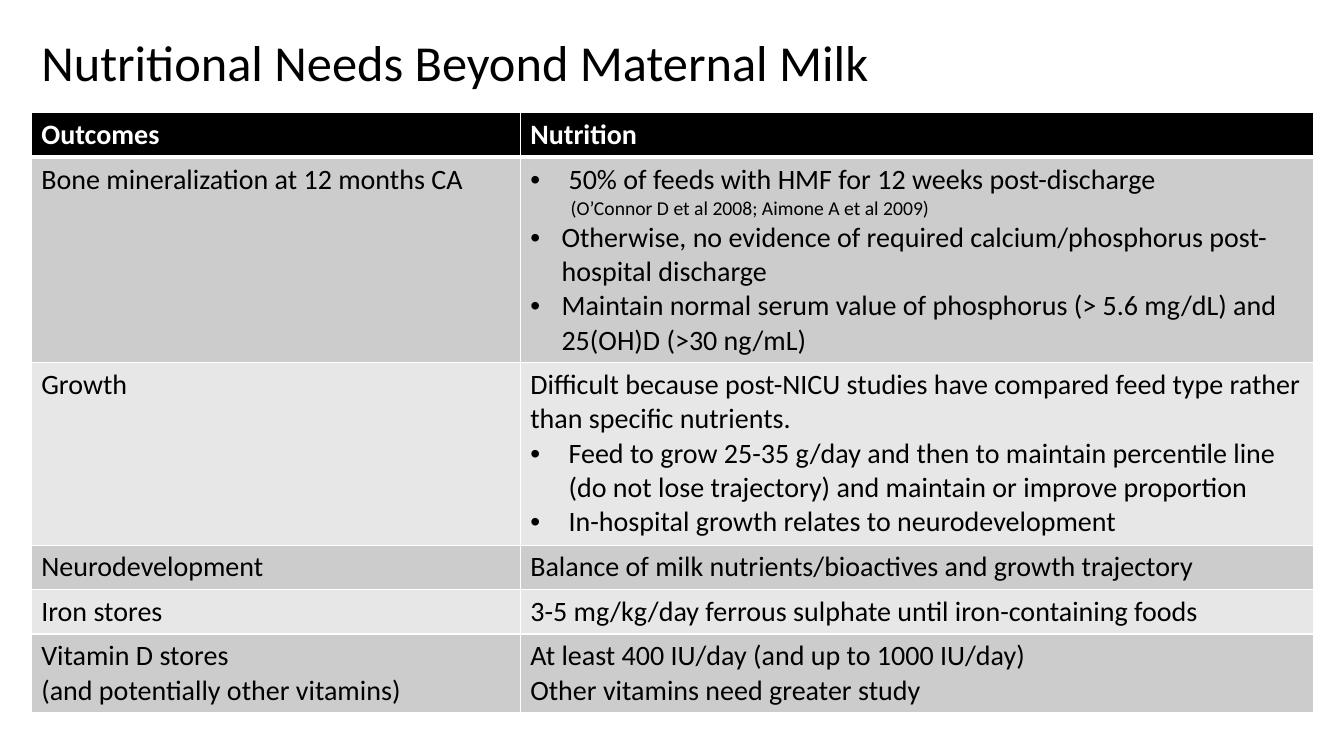
import pptx
import pptx.dml.color
import pptx.enum.text
import pptx.oxml
import pptx.oxml.ns
import pptx.util

Inches = pptx.util.Inches
Pt = pptx.util.Pt
RGBColor = pptx.dml.color.RGBColor

BLACK = RGBColor(0x00, 0x00, 0x00)
WHITE = RGBColor(0xFF, 0xFF, 0xFF)
DARK_BAND = RGBColor(0xCC, 0xCC, 0xCC)
LIGHT_BAND = RGBColor(0xE7, 0xE7, 0xE7)
FONT = "Calibri"

COL_WIDTHS = [4.85, 7.87]
ROW_HEIGHTS = [0.44, 2.03, 1.81, 0.44, 0.44, 0.78]

# Each paragraph: text, left indent in inches, bulleted, size in points
ROWS = [
    ([("Outcomes", 0, False, 20)],
     [("Nutrition", 0, False, 20)]),
    ([("Bone mineralization at 12 months CA", 0, False, 20)],
     [("50% of feeds with HMF for 12 weeks post-discharge", 0.38, True, 20),
      ("(O’Connor D et al 2008; Aimone A et al 2009)", 0.4, False, 14),
      ("Otherwise, no evidence of required calcium/phosphorus post-hospital discharge", 0.31, True, 20),
      ("Maintain normal serum value of phosphorus (> 5.6 mg/dL) and 25(OH)D (>30 ng/mL)", 0.31, True, 20)]),
    ([("Growth", 0, False, 20)],
     [("Difficult because post-NICU studies have compared feed type rather than specific nutrients.", 0, False, 20),
      ("Feed to grow 25-35 g/day and then to maintain percentile line "
       "(do not lose trajectory) and maintain or improve proportion", 0.38, True, 20),
      ("In-hospital growth relates to neurodevelopment", 0.38, True, 20)]),
    ([("Neurodevelopment", 0, False, 20)],
     [("Balance of milk nutrients/bioactives and growth trajectory", 0, False, 20)]),
    ([("Iron stores", 0, False, 20)],
     [("3-5 mg/kg/day ferrous sulphate until iron-containing foods", 0, False, 20)]),
    ([("Vitamin D stores", 0, False, 20),
      ("(and potentially other vitamins)", 0, False, 20)],
     [("At least 400 IU/day (and up to 1000 IU/day)", 0, False, 20),
      ("Other vitamins need greater study", 0, False, 20)]),
]


def set_borders(cell, top, bottom):
    """Draw white cell borders; top and bottom widths are in points."""
    tcPr = cell._tc.get_or_add_tcPr()
    widths = {"lnL": 1, "lnR": 1, "lnT": top, "lnB": bottom}
    for i, (side, width) in enumerate(widths.items()):
        tcPr.insert(i, pptx.oxml.parse_xml(
            f'<a:{side} {pptx.oxml.ns.nsdecls("a")} w="{Pt(width)}">'
            f'<a:solidFill><a:srgbClr val="{WHITE}"/></a:solidFill></a:{side}>'))


def format_paragraph(p, indent, bullet, size, color, bold):
    pPr = p._p.get_or_add_pPr()
    if indent:
        pPr.set("marL", str(Inches(indent)))
        pPr.set("indent", str(-Inches(indent) if bullet else 0))
    if bullet:
        for xml in ('<a:buFont {} typeface="Arial"/>', '<a:buChar {} char="•"/>'):
            pPr.append(pptx.oxml.parse_xml(xml.format(pptx.oxml.ns.nsdecls("a"))))
    for r in p.runs:
        r.font.name = FONT
        r.font.size = Pt(size)
        r.font.bold = bold
        r.font.color.rgb = color


prs = pptx.Presentation()
prs.slide_width = Inches(13.33)
prs.slide_height = Inches(7.5)
s = prs.slides.add_slide(prs.slide_layouts[5])

title = s.shapes.title
title.left, title.top = Inches(0.31), Inches(0.3)
title.width, title.height = Inches(11.36), Inches(0.7)
tf = title.text_frame
tf.text = "Nutritional Needs Beyond Maternal Milk"
tf.vertical_anchor = pptx.enum.text.MSO_ANCHOR.MIDDLE
p = tf.paragraphs[0]
p.alignment = pptx.enum.text.PP_ALIGN.LEFT
p.line_spacing = 0.9
format_paragraph(p, 0, False, 36, BLACK, False)

table = s.shapes.add_table(
    len(ROWS), len(COL_WIDTHS), Inches(0.31), Inches(1.12),
    Inches(sum(COL_WIDTHS)), Inches(sum(ROW_HEIGHTS))).table
for column, width in zip(table.columns, COL_WIDTHS):
    column.width = Inches(width)

for i, (row, height) in enumerate(zip(ROWS, ROW_HEIGHTS)):
    table.rows[i].height = Inches(height)
    header = i == 0
    band = BLACK if header else DARK_BAND if i % 2 else LIGHT_BAND
    for j, paragraphs in enumerate(row):
        cell = table.cell(i, j)
        cell.fill.solid()
        cell.fill.fore_color.rgb = band
        set_borders(cell, 3 if i == 1 else 1, 3 if header else 1)
        tf = cell.text_frame
        tf.text = "\n".join(text for text, *_ in paragraphs)
        for p, (_, indent, bullet, size) in zip(tf.paragraphs, paragraphs):
            format_paragraph(p, indent, bullet, size, WHITE if header else BLACK, header)

prs.save("out.pptx")
